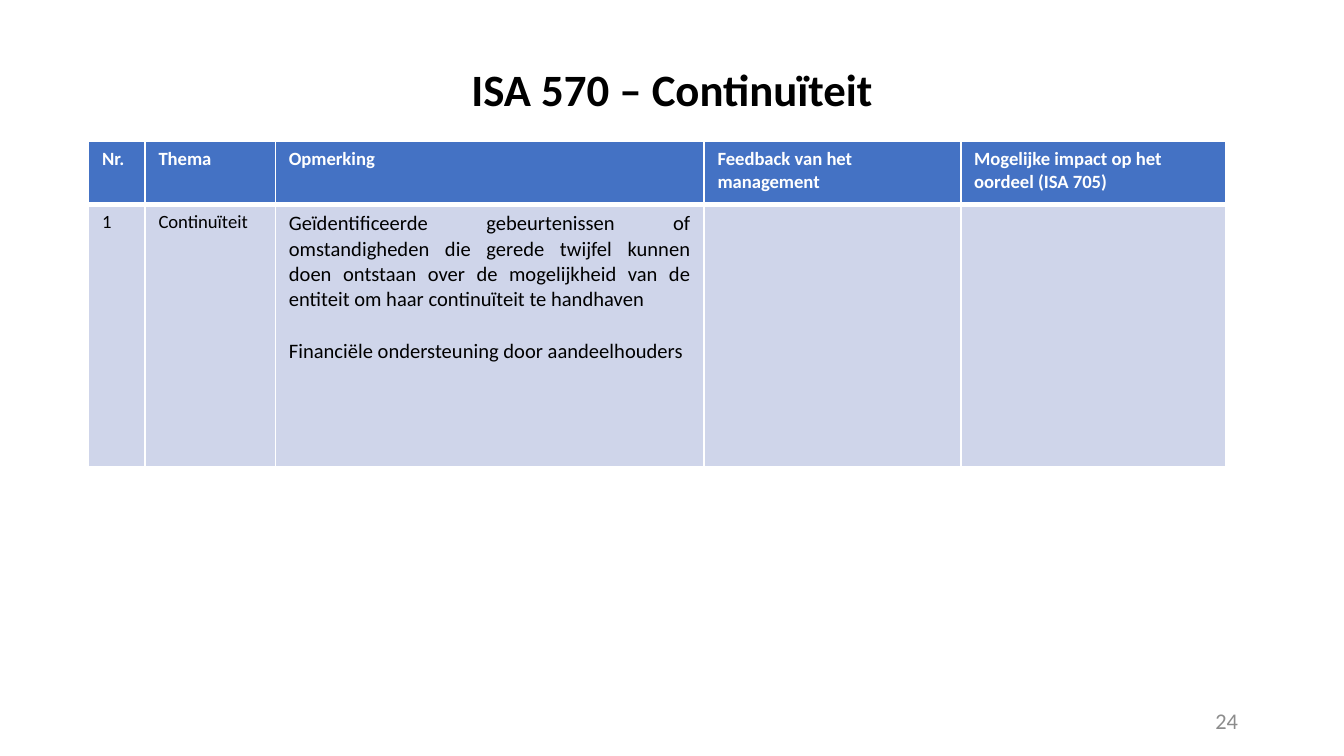
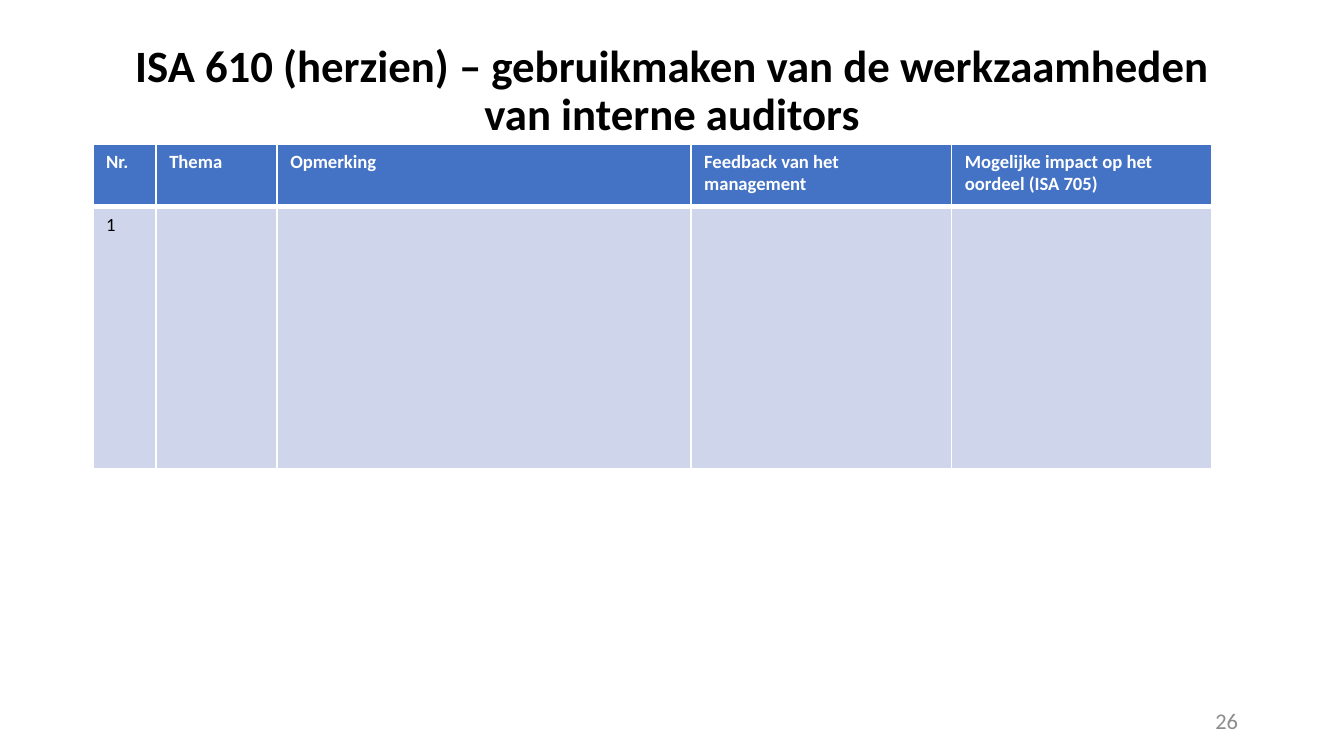
from lxml.etree import SubElement
from pptx import Presentation
from pptx.dml.color import RGBColor
from pptx.enum.text import MSO_ANCHOR, PP_ALIGN
from pptx.oxml.ns import qn
from pptx.util import Inches, Pt

FONT = "Calibri"
BLACK, WHITE, GREY = "000000", "FFFFFF", "8C8C8C"
HEADER_FILL, BODY_FILL = "4472C4", "CFD5EA"
HEADINGS = ["Nr.", "Thema", "Opmerking", "Feedback van het management",
            "Mogelijke impact op het oordeel (ISA 705)"]
ROW_HEIGHTS = [0.47, 1.95]
CONTINUITY_REMARKS = [
    "Geïdentificeerde gebeurtenissen of omstandigheden die gerede twijfel kunnen "
    "doen ontstaan over de mogelijkheid van de entiteit om haar continuïteit te handhaven",
    "Financiële ondersteuning door aandeelhouders",
]


def rgb(hex_color):
    """Turn a hex string into a colour."""
    return RGBColor.from_string(hex_color)


def style(paragraph, size, color, bold=False, align=PP_ALIGN.LEFT):
    """Set the font and alignment of a paragraph."""
    font = paragraph.font
    font.name, font.size, font.bold = FONT, Pt(size), bold
    font.color.rgb = rgb(color)
    paragraph.alignment = align


def add_text(slide, box, text, size, color, align, bold=False):
    """Add a wrapped, vertically centred text box and return its paragraph."""
    frame = slide.shapes.add_textbox(*map(Inches, box)).text_frame
    frame.word_wrap = True
    frame.vertical_anchor = MSO_ANCHOR.MIDDLE
    paragraph = frame.paragraphs[0]
    paragraph.text = text
    style(paragraph, size, color, bold, align)
    return paragraph


def add_title(slide, text):
    """Add the centred slide title."""
    title = add_text(slide, (0.69, 0.14, 8.62, 1.09), text, 24, BLACK, PP_ALIGN.CENTER, True)
    title.line_spacing = 0.9


def add_page_number(slide, number):
    """Add the page number at the lower right."""
    add_text(slide, (7.06, 5.21, 2.25, 0.3), str(number), 12, GREY, PP_ALIGN.RIGHT)


def format_cell(cell, fill, bottom_width):
    """Give a cell white borders and a solid fill."""
    properties = cell._tc.get_or_add_tcPr()
    for side, width in (("L", 1), ("R", 1), ("T", 1), ("B", bottom_width)):
        border = SubElement(properties, qn(f"a:ln{side}"), w=str(Pt(width)))
        SubElement(SubElement(border, qn("a:solidFill")), qn("a:srgbClr"), val=WHITE)
    cell.fill.solid()
    cell.fill.fore_color.rgb = rgb(fill)


def fill_remarks(cell, remarks):
    """Write justified remarks with one line of space between them."""
    cell.text = "\n".join(remarks)
    for index, paragraph in enumerate(cell.text_frame.paragraphs):
        style(paragraph, 11, BLACK, align=PP_ALIGN.JUSTIFY)
        paragraph.space_before = Pt(14 if index else 0)


def add_findings_table(slide, left, top, column_widths, theme, remarks):
    """Add the table with a heading row and one numbered finding."""
    table = slide.shapes.add_table(
        len(ROW_HEIGHTS), len(HEADINGS), Inches(left), Inches(top),
        Inches(sum(column_widths)), Inches(sum(ROW_HEIGHTS))).table
    for row, height in zip(table.rows, ROW_HEIGHTS):
        row.height = Inches(height)
    for index, (heading, width) in enumerate(zip(HEADINGS, column_widths)):
        table.columns[index].width = Inches(width)
        header, body = table.cell(0, index), table.cell(1, index)
        header.text = heading
        style(header.text_frame.paragraphs[0], 10, WHITE, True)
        format_cell(header, HEADER_FILL, 3)
        format_cell(body, BODY_FILL, 1)
    for index, (text, align) in enumerate([("1", PP_ALIGN.LEFT), (theme, PP_ALIGN.JUSTIFY)]):
        cell = table.cell(1, index)
        cell.text = text
        style(cell.text_frame.paragraphs[0], 10, BLACK, align=align)
    if remarks:
        fill_remarks(table.cell(1, 2), remarks)


def add_standard_slide(deck, title, number, left, top, column_widths, theme="", remarks=()):
    """Add a slide on one auditing standard."""
    slide = deck.slides.add_slide(deck.slide_layouts[6])
    add_page_number(slide, number)
    add_findings_table(slide, left, top, column_widths, theme, remarks)
    add_title(slide, title)


def main():
    """Build and save the slides."""
    deck = Presentation()
    deck.slide_width = Inches(10)
    deck.slide_height = deck.slide_width * 9 // 16
    add_standard_slide(deck, "ISA 570 – Continuïteit", 24, 0.66, 1.05,
                       [0.42, 0.97, 3.19, 1.91, 1.97], "Continuïteit", CONTINUITY_REMARKS)
    add_standard_slide(
        deck, "ISA 610 (herzien) – gebruikmaken van de werkzaamheden van interne auditors",
        26, 0.69, 1.07, [0.47, 0.9, 3.08, 1.94, 1.94])
    deck.save("out.pptx")


if __name__ == "__main__":
    main()
